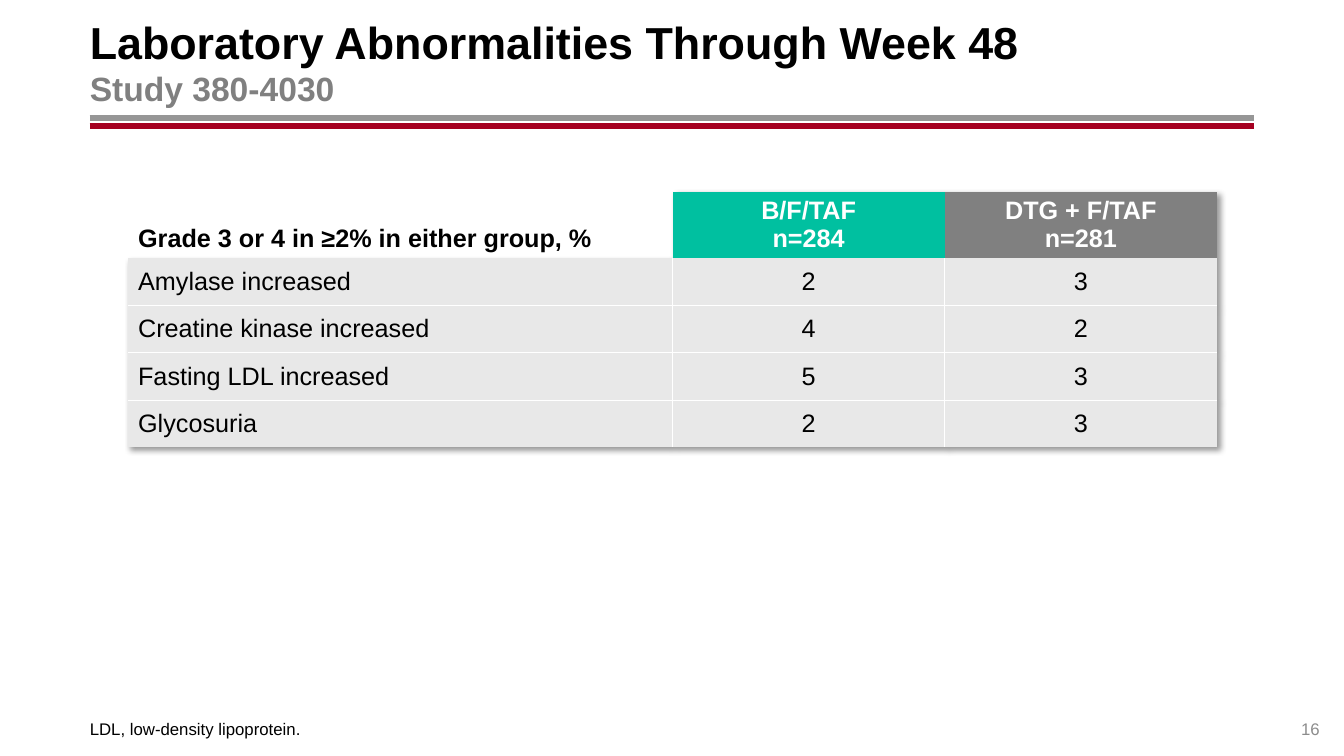
import lxml.etree
import pptx
import pptx.dml.color
import pptx.enum.shapes
import pptx.enum.text
import pptx.oxml
import pptx.oxml.ns
import pptx.util

TITLE = "Laboratory Abnormalities Through Week 48"
SUBTITLE = "Study 380-4030"
FOOTNOTE = "LDL, low-density lipoprotein."
PAGE = "16"
HEADER = [
    ("Grade 3 or 4 in ≥2% in either group, %", None),
    ("B/F/TAF\nn=284", "00C0A0"),
    ("DTG + F/TAF\nn=281", "808080"),
]
ROWS = [
    ("Amylase increased", "2", "3"),
    ("Creatine kinase increased", "4", "2"),
    ("Fasting LDL increased", "5", "3"),
    ("Glycosuria", "2", "3"),
]
RULES = [(1.17, "969696"), (1.25, "A50021")]

WIDTH, HEIGHT = 13.33, 7.5
LEFT, CONTENT_W = 0.89, 11.55
RIGHT = LEFT + CONTENT_W
COL_UNIT = 2.7
COL_WIDTHS = [2 * COL_UNIT, COL_UNIT, COL_UNIT]
ROW_HEIGHTS = [0.66] + [0.47] * len(ROWS)
TABLE_LEFT, TABLE_TOP = 1.27, 1.9
NO_STYLE = "{2D5ABB26-0587-4C30-8999-92F81FD0307C}"
NS = pptx.oxml.ns.nsdecls("a")
SHADOW = (
    f'<a:effectLst {NS}><a:outerShdw blurRad="50800" dist="38100" dir="2700000" '
    'algn="tl" rotWithShape="0"><a:srgbClr val="000000"><a:alpha val="40000"/>'
    "</a:srgbClr></a:outerShdw></a:effectLst>"
)
ALIGN = pptx.enum.text.PP_ALIGN
ANCHOR = pptx.enum.text.MSO_ANCHOR
inch = pptx.util.Inches


def rgb(value):
    return pptx.dml.color.RGBColor.from_string(value)


def add_text(p, text, size=18, color="000000", bold=False, align=ALIGN.LEFT):
    p.alignment = align
    p.space_before = pptx.util.Pt(0)
    r = p.add_run()
    r.text = text
    r.font.name = "Arial"
    r.font.size = pptx.util.Pt(size)
    r.font.bold = bold
    r.font.color.rgb = rgb(color)


def place(sp, left, top, width, height, anchor, insets=(0, 0, 0, 0)):
    sp.left, sp.top, sp.width, sp.height = map(inch, (left, top, width, height))
    tf = sp.text_frame
    tf.word_wrap = True
    tf.auto_size = pptx.enum.text.MSO_AUTO_SIZE.NONE
    tf.vertical_anchor = anchor
    tf.margin_left, tf.margin_top, tf.margin_right, tf.margin_bottom = map(inch, insets)
    return tf.paragraphs[0]


def add_rule(s, y, color):
    line = s.shapes.add_connector(
        pptx.enum.shapes.MSO_CONNECTOR.STRAIGHT, inch(LEFT), inch(y), inch(RIGHT), inch(y))
    line.line.color.rgb = rgb(color)
    line.line.width = pptx.util.Pt(4.25)
    lxml.etree.SubElement(line._element.spPr, pptx.oxml.ns.qn("a:effectLst"))


def fill_cell(cell, text, fill, pad_x, pad_y, anchor, **fmt):
    cell.margin_left = cell.margin_right = inch(pad_x)
    cell.margin_top = cell.margin_bottom = inch(pad_y)
    cell.vertical_anchor = anchor
    if fill:
        cell.fill.solid()
        cell.fill.fore_color.rgb = rgb(fill)
    else:
        cell.fill.background()
    for i, line in enumerate(text.split("\n")):
        tf = cell.text_frame
        add_text(tf.add_paragraph() if i else tf.paragraphs[0], line, **fmt)


def add_borders(cell, sides):
    tc_pr = cell._tc.get_or_add_tcPr()
    for i, side in enumerate(sides):
        tc_pr.insert(i, pptx.oxml.parse_xml(
            f'<a:ln{side} {NS} w="12700"><a:solidFill><a:srgbClr val="FFFFFF"/>'
            f"</a:solidFill></a:ln{side}>"))


def add_results(s):
    frame = s.shapes.add_table(
        len(ROW_HEIGHTS), len(COL_WIDTHS), inch(TABLE_LEFT), inch(TABLE_TOP),
        inch(sum(COL_WIDTHS)), inch(sum(ROW_HEIGHTS)))
    table = frame.table
    table.first_row = table.horz_banding = False
    tbl_pr = table._tbl.tblPr
    tbl_pr.find(pptx.oxml.ns.qn("a:tableStyleId")).text = NO_STYLE
    tbl_pr.insert(0, pptx.oxml.parse_xml(SHADOW))
    for column, width in zip(table.columns, COL_WIDTHS):
        column.width = inch(width)
    for row, height in zip(table.rows, ROW_HEIGHTS):
        row.height = inch(height)

    for c, (text, fill) in enumerate(HEADER):
        fill_cell(table.cell(0, c), text, fill, 0.13 if c else 0.1, 0.05,
                  ANCHOR.MIDDLE if c else ANCHOR.BOTTOM, bold=True,
                  color="FFFFFF" if c else "000000",
                  align=ALIGN.CENTER if c else ALIGN.LEFT)
    for r, values in enumerate(ROWS, 1):
        for c, text in enumerate(values):
            cell = table.cell(r, c)
            fill_cell(cell, text, "E8E8E8", 0.1, 0.03 if c else 0.05, ANCHOR.MIDDLE,
                      align=ALIGN.CENTER if c else ALIGN.LEFT)
            inner = {"L": c > 0, "R": c < len(values) - 1, "T": r > 1, "B": r < len(ROWS)}
            add_borders(cell, [side for side, shown in inner.items() if shown])


def main():
    prs = pptx.Presentation()
    prs.slide_width, prs.slide_height = inch(WIDTH), inch(HEIGHT)
    s = prs.slides.add_slide(prs.slide_layouts[1])
    for y, color in RULES:
        add_rule(s, y, color)

    p = place(s.shapes.title, LEFT, 0.18, CONTENT_W, 0.86, ANCHOR.MIDDLE, (0, 0.05, 0.1, 0.05))
    add_text(p, TITLE, size=32, bold=True)
    p.add_line_break()
    lxml.etree.SubElement(p._p[-1], pptx.oxml.ns.qn("a:rPr")).set("sz", "3200")
    add_text(p, SUBTITLE, size=24, color="808080", bold=True)

    p = place(s.placeholders[1], LEFT, 6.83, CONTENT_W, 0.5, ANCHOR.BOTTOM)
    add_text(p, FOOTNOTE, size=12)
    p_pr = p._p.get_or_add_pPr()
    p_pr.set("marL", "0")
    p_pr.set("indent", "0")
    lxml.etree.SubElement(p_pr, pptx.oxml.ns.qn("a:buNone"))

    add_results(s)

    page = s.shapes.add_textbox(0, 0, 0, 0)
    p = place(page, RIGHT, 6.93, 0.65, 0.4, ANCHOR.BOTTOM)
    add_text(p, PAGE, size=12, color="8C8C8C", align=ALIGN.RIGHT)
    prs.save("out.pptx")


if __name__ == "__main__":
    main()
